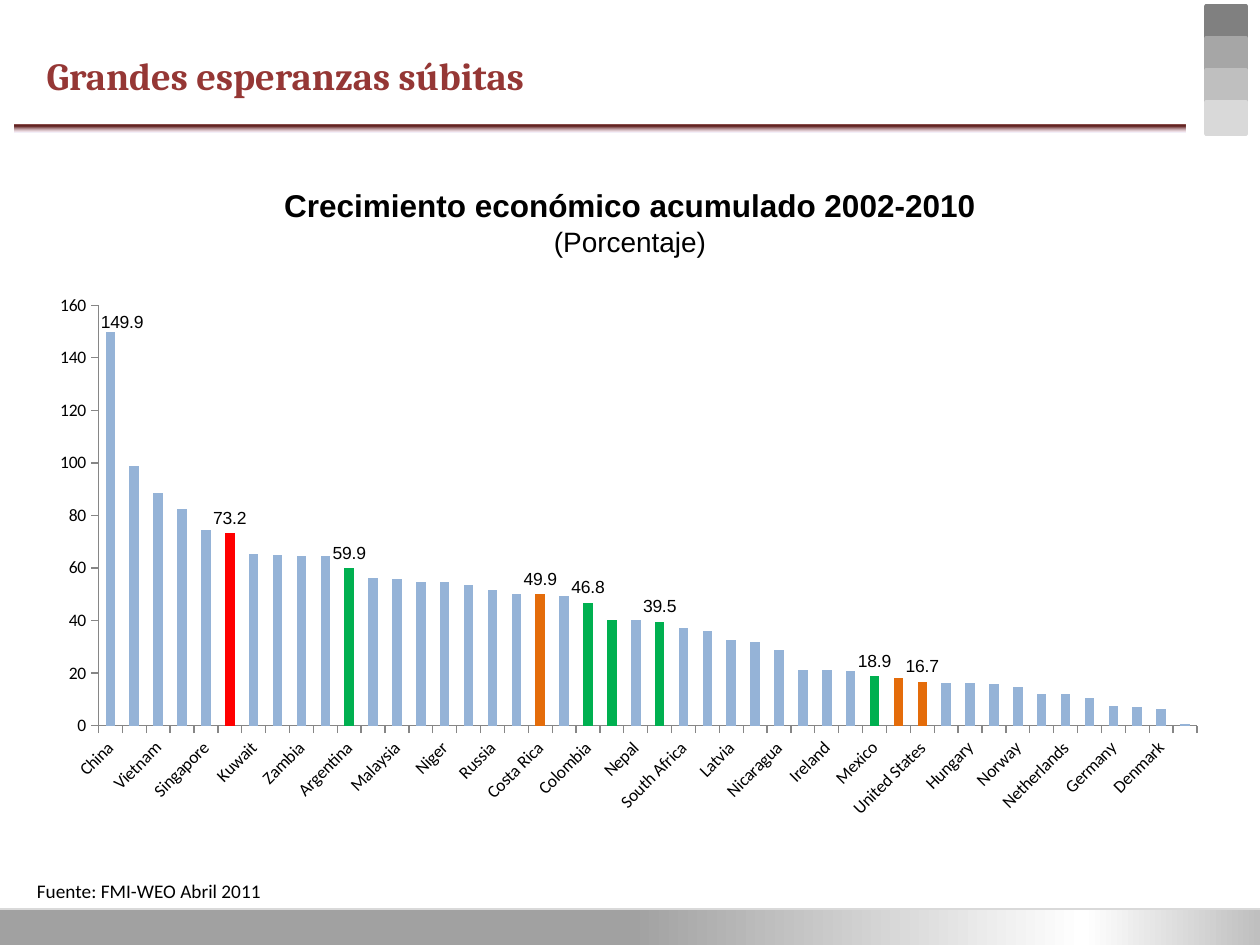
from lxml import etree
from pptx import Presentation
from pptx.chart.data import CategoryChartData
from pptx.dml.color import RGBColor
from pptx.enum.chart import XL_CHART_TYPE, XL_LABEL_POSITION, XL_TICK_MARK
from pptx.enum.shapes import MSO_CONNECTOR, MSO_SHAPE
from pptx.enum.text import MSO_ANCHOR, PP_ALIGN
from pptx.oxml import parse_xml
from pptx.oxml.ns import nsdecls, qn
from pptx.util import Pt

RECT = MSO_SHAPE.RECTANGLE
STRAIGHT = MSO_CONNECTOR.STRAIGHT
COLUMNS = XL_CHART_TYPE.COLUMN_CLUSTERED
LABEL_ABOVE = XL_LABEL_POSITION.OUTSIDE_END
TICK_OUT = XL_TICK_MARK.OUTSIDE
TOP = MSO_ANCHOR.TOP
LEFT, CENTER = PP_ALIGN.LEFT, PP_ALIGN.CENTER

BLACK, AXIS_GREY = "000000", "868686"
BAR_BLUE, RED, GREEN, ORANGE = "95B3D7", "FF0000", "00B050", "E46C0A"

GROWTH = {
    "China": 149.9, "India": 98.7, "Vietnam": 88.6, "Panama": 82.5,
    "Singapore": 74.3, "Peru": 73.2, "Kuwait": 65.3, "Malawi": 64.8,
    "Zambia": 64.6, "Dominican R.": 64.5, "Argentina": 59.9, "Egypt": 56.3,
    "Malaysia": 55.9, "Pakistan": 54.5, "Niger": 54.5, "Libya": 53.5,
    "Russia": 51.6, "Morocco": 50.0, "Costa Rica": 49.9, "Thailand": 49.5,
    "Colombia": 46.8, "Brazil": 40.3, "Nepal": 40.2, "Chile": 39.5,
    "South Africa": 37.1, "Israel": 36.1, "Latvia": 32.6, "Australia": 31.8,
    "Nicaragua": 28.8, "Greece": 21.2, "Ireland": 21.1, "Sweden": 20.7,
    "Mexico": 18.9, "Canada": 18.3, "United States": 16.7,
    "Switzerland": 16.1, "Hungary": 16.1, "Austria": 15.8, "Norway": 14.7,
    "United Kingdom": 12.2, "Netherlands": 12.1, "France": 10.5,
    "Germany": 7.3, "Japan": 7.1, "Denmark": 6.2, "Italy": 0.7,
}
HIGHLIGHTS = {
    "Peru": RED, "Argentina": GREEN, "Colombia": GREEN, "Brazil": GREEN,
    "Chile": GREEN, "Mexico": GREEN, "Costa Rica": ORANGE,
    "Canada": ORANGE, "United States": ORANGE,
}
LABELLED = ["China", "Peru", "Argentina", "Costa Rica", "Colombia", "Chile",
            "Mexico", "United States"]


def rgb(value):
    return RGBColor.from_string(value)


def set_font(font, **formats):
    for name, value in formats.items():
        if name == "color":
            font.color.rgb = rgb(value)
        else:
            setattr(font, name, value)


def add_rect(slide, box):
    rect = slide.shapes.add_shape(RECT, *map(Pt, box))
    rect.shadow.inherit = False
    return rect


def fill_gradient(shape, stops, angle):
    """Stops are (percent, colour, opacity percent)."""
    shape.line.fill.background()
    shape.fill.gradient()
    gradient = shape.fill._xPr.find(qn("a:gradFill"))
    stop_xml = "".join(
        f'<a:gs pos="{pos * 1000}"><a:srgbClr val="{color}">'
        f'<a:alpha val="{opacity * 1000}"/></a:srgbClr></a:gs>'
        for pos, color, opacity in stops)
    new = parse_xml(
        f'<a:gradFill {nsdecls("a")} rotWithShape="1"><a:gsLst>{stop_xml}</a:gsLst>'
        f'<a:lin ang="{angle * 60000}" scaled="0"/></a:gradFill>')
    gradient.getparent().replace(gradient, new)


def add_text(slide, box, lines, align=LEFT):
    frame = slide.shapes.add_textbox(*map(Pt, box)).text_frame
    frame.word_wrap = True
    frame.vertical_anchor = TOP
    for index, (text, formats) in enumerate(lines):
        paragraph = frame.add_paragraph() if index else frame.paragraphs[0]
        paragraph.alignment = align
        run = paragraph.add_run()
        run.text = text
        set_font(run.font, **formats)


def add_footer_band(slide, box):
    left, top, width, _ = box
    band = add_rect(slide, box)
    fill_gradient(band, [(50, "A1A1A1", 100), (86, "FFFFFF", 100),
                         (100, "BFBFBF", 100)], 0)
    edge = slide.shapes.add_connector(
        STRAIGHT, Pt(left), Pt(top + 0.5), Pt(left + width), Pt(top + 0.5))
    edge.line.color.rgb = rgb("D9D9D9")
    edge.line.width = Pt(0.75)
    etree.SubElement(edge._element.spPr, qn("a:effectLst"))


def add_corner_squares(slide, box):
    left, top, width, height = box
    greys = ["808080", "A6A6A6", "BFBFBF", "D9D9D9"]
    step = height / len(greys)
    for row, grey in enumerate(greys):
        square = add_rect(slide, (left, top + row * step, width, step))
        square.fill.solid()
        square.fill.fore_color.rgb = rgb(grey)
        square.line.color.rgb = rgb(grey)
        square.line.width = Pt(2)


def add_title(slide, box):
    left, top, width, height = box
    add_text(slide, (left, top, width, height), [
        ("Grandes esperanzas súbitas",
         dict(name="Cambria", size=Pt(22), bold=True, color="953735"))])
    # Rule under the title
    rule = add_rect(slide, (8.5, top + height, 669, 4.5))
    fill_gradient(rule, [(23, "632523", 100), (97, "FFEBFA", 43),
                         (100, "85C2FF", 43)], 90)


def style_axis(axis):
    axis.has_major_gridlines = False
    axis.major_tick_mark = TICK_OUT
    axis.format.line.color.rgb = rgb(AXIS_GREY)
    axis.format.line.width = Pt(0.75)
    set_font(axis.tick_labels.font, name="Calibri", size=Pt(10), color=BLACK)


def manual_layout(**values):
    items = "".join(f'<c:{key} val="{value}"/>' for key, value in values.items())
    return parse_xml(f'<c:layout {nsdecls("c")}><c:manualLayout>{items}'
                     '</c:manualLayout></c:layout>')


def add_growth_chart(slide, box):
    data = CategoryChartData(number_format="0.0")
    data.categories = list(GROWTH)
    data.add_series("Series 1", list(GROWTH.values()))
    chart = slide.shapes.add_chart(COLUMNS, *map(Pt, box), data).chart
    chart.has_legend = chart.has_title = False
    set_font(chart.font, name="Calibri", size=Pt(10), color=BLACK)

    # Axes: every second country, slanted
    countries, percent = chart.category_axis, chart.value_axis
    style_axis(countries)
    style_axis(percent)
    percent.minimum_scale, percent.maximum_scale, percent.major_unit = 0, 160, 20
    percent.tick_labels.number_format = "0"
    percent.tick_labels.number_format_is_linked = False
    countries._element.get_or_add_txPr().bodyPr.set("rot", "-2700000")
    skip = parse_xml(f'<c:tickLblSkip {nsdecls("c")} val="2"/>')
    countries._element.find(qn("c:noMultiLvlLbl")).addprevious(skip)

    # Columns with highlighted countries
    plot = chart.plots[0]
    plot.vary_by_categories = False
    plot.gap_width = 150
    series = plot.series[0]
    series.format.fill.solid()
    series.format.fill.fore_color.rgb = rgb(BAR_BLUE)
    order = list(GROWTH)
    for country, color in HIGHLIGHTS.items():
        fill = series.points[order.index(country)].format.fill
        fill.solid()
        fill.fore_color.rgb = rgb(color)
    for country in LABELLED:
        label = series.points[order.index(country)].data_label
        set_font(label.font, name="Arial", size=Pt(10), color=BLACK)
        label.position = LABEL_ABOVE

    # Move the first label clear of the axis, and fix the plot area
    first_label = series._element.find(".//" + qn("c:dLbl"))
    first_label.find(qn("c:idx")).addnext(manual_layout(x=0.01, y=0.01))
    plot_area = chart._chartSpace.chart.plotArea
    for old in plot_area.findall(qn("c:layout")):
        plot_area.remove(old)
    plot_area.insert(0, manual_layout(
        layoutTarget="inner", xMode="edge", yMode="edge",
        x=0.05, y=0.04, w=0.93, h=0.77))


def main():
    prs = Presentation()
    prs.slide_width, prs.slide_height = Pt(720), Pt(540)
    slide = prs.slides.add_slide(prs.slide_layouts[6])
    add_footer_band(slide, (0, 519, 720, 21))
    add_corner_squares(slide, (689, 3.5, 23, 73))
    add_title(slide, (19.5, 26, 527, 45.5))
    # Chart heading
    heading = dict(name="Arial", color=BLACK)
    add_text(slide, (65, 103, 590, 48), [
        ("Crecimiento económico acumulado 2002-2010",
         dict(heading, size=Pt(18), bold=True)),
        ("(Porcentaje)", dict(heading, size=Pt(16), bold=False))], CENTER)
    add_growth_chart(slide, (22.5, 162, 675, 312))
    # Source note
    add_text(slide, (14, 499, 210, 21), [
        ("Fuente: FMI-WEO Abril 2011",
         dict(name="Calibri", size=Pt(11), color=BLACK))])
    prs.save("out.pptx")


if __name__ == "__main__":
    main()
